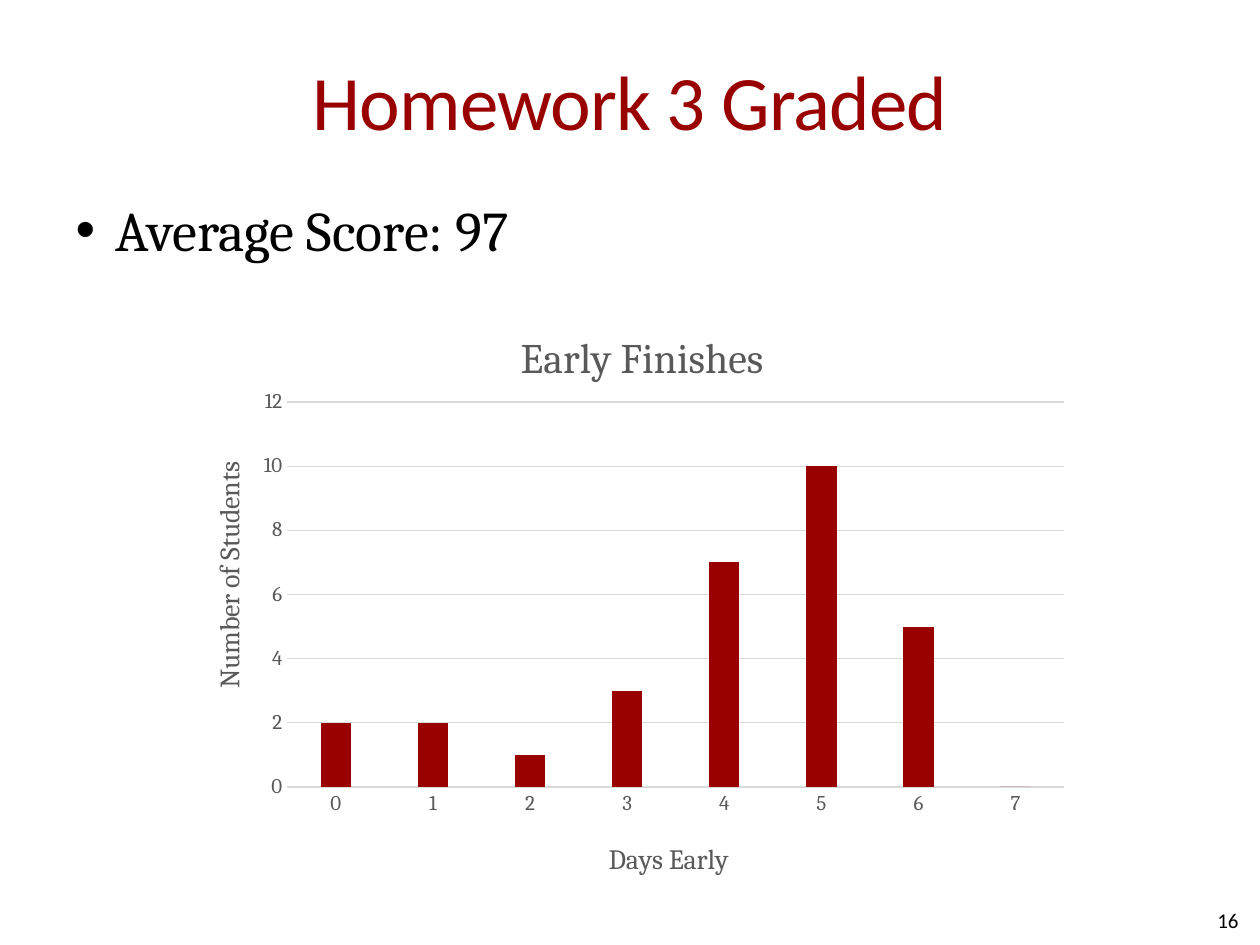
from lxml import etree
from pptx import Presentation
from pptx.chart.data import CategoryChartData
from pptx.dml.color import RGBColor
from pptx.enum.chart import XL_CHART_TYPE, XL_TICK_MARK
from pptx.enum.text import MSO_ANCHOR, PP_ALIGN
from pptx.oxml.ns import qn
from pptx.util import Inches, Pt

COLUMN = XL_CHART_TYPE.COLUMN_CLUSTERED
NO_TICK = XL_TICK_MARK.NONE
MIDDLE = MSO_ANCHOR.MIDDLE
CENTER, RIGHT = PP_ALIGN.CENTER, PP_ALIGN.RIGHT

TITLE = "Homework 3 Graded"
BULLET = "Average Score: 97"
PAGE_NUMBER = "16"
CHART_TITLE = "Early Finishes"
CATEGORY_TITLE = "Days Early"
VALUE_TITLE = "Number of Students"
STUDENTS_BY_DAYS_EARLY = [2, 2, 1, 3, 7, 10, 5, 0]

THEME = {
    "heading": "Calibri",
    "text": "Cambria",
    "accent": RGBColor.from_string("990000"),
    "black": RGBColor.from_string("000000"),
    "gray": RGBColor.from_string("595959"),
    "grid": RGBColor.from_string("D9D9D9"),
    "title_size": 44,
    "body_size": 32,
    "chart_title_size": 24,
    "axis_title_size": 16,
    "label_size": 12,
}

BOXES = {
    "title": (0.5, 0.17, 9, 1.25),
    "body": (0.5, 1.5, 9, 0.67),
    "number": (7.5, 7.1, 2.33, 0.4),
    "chart": (1.42, 2.27, 7.17, 4.85),
}
LAYOUTS = {
    "plot": {"x": 0.12, "y": 0.19, "w": 0.86, "h": 0.63},
    "chart_title": {"x": 0.37, "y": 0.06},
    "category_title": {"x": 0.47, "y": 0.9},
    "value_title": {"x": 0.03, "y": 0.28},
}


def box(name):
    return [Inches(length) for length in BOXES[name]]


def place(shape, name):
    shape.left, shape.top, shape.width, shape.height = box(name)


def format_font(font, face, size, color):
    values = {"name": THEME[face], "size": Pt(THEME[size]), "bold": False}
    for attribute, value in values.items():
        setattr(font, attribute, value)
    font.color.rgb = THEME[color]


def write(text_frame, text, face, size, color, **frame_format):
    for attribute, value in frame_format.items():
        setattr(text_frame, attribute, value)
    paragraph = text_frame.paragraphs[0]
    run = paragraph.add_run()
    run.text = text
    format_font(run.font, face, size, color)
    return paragraph, run


def set_layout(element, position, index):
    for old_layout in element.findall(qn("c:layout")):
        element.remove(old_layout)
    layout = etree.Element(qn("c:layout"))
    manual = etree.SubElement(layout, qn("c:manualLayout"))
    settings = {"xMode": "edge", "yMode": "edge", **position}
    if "w" in position:
        settings = {"layoutTarget": "inner", **settings}
    for tag, value in settings.items():
        etree.SubElement(manual, qn(f"c:{tag}")).set("val", str(value))
    element.insert(index, layout)


def add_chart_title(owner, title, text, size, layout):
    write(title.text_frame, text, "text", size, "gray")
    set_layout(title._element, LAYOUTS[layout], 1)


def format_axis(axis, title, layout):
    axis.major_tick_mark = axis.minor_tick_mark = NO_TICK
    format_font(axis.tick_labels.font, "text", "label_size", "gray")
    add_chart_title(axis, axis.axis_title, title, "axis_title_size", layout)


def format_line(line):
    line.color.rgb = THEME["grid"]
    line.width = Pt(0.75)


def add_students_chart(slide):
    data = CategoryChartData()
    data.categories = [str(day) for day in range(len(STUDENTS_BY_DAYS_EARLY))]
    data.add_series("Series 1", STUDENTS_BY_DAYS_EARLY)
    chart = slide.shapes.add_chart(COLUMN, *box("chart"), data).chart
    chart.has_legend = False
    chart.font.name = THEME["text"]
    chart.font.size = Pt(10)
    add_chart_title(chart, chart.chart_title, CHART_TITLE, "chart_title_size", "chart_title")

    plot = chart.plots[0]
    plot.gap_width, plot.overlap, plot.vary_by_categories = 219, -27, False
    fill = plot.series[0].format.fill
    fill.solid()
    fill.fore_color.rgb = THEME["accent"]

    format_axis(chart.category_axis, CATEGORY_TITLE, "category_title")
    format_line(chart.category_axis.format.line)
    value_axis = chart.value_axis
    format_axis(value_axis, VALUE_TITLE, "value_title")
    value_axis.minimum_scale, value_axis.maximum_scale, value_axis.major_unit = 0, 12, 2
    value_axis.format.line.fill.background()
    format_line(value_axis.major_gridlines.format.line)
    set_layout(chart._chartSpace.chart.plotArea, LAYOUTS["plot"], 0)


def main():
    presentation = Presentation()
    presentation.slide_width, presentation.slide_height = Inches(10), Inches(7.5)
    slide = presentation.slides.add_slide(presentation.slide_layouts[1])

    title = slide.shapes.title
    place(title, "title")
    paragraph, run = write(title.text_frame, TITLE, "heading", "title_size", "accent",
                           vertical_anchor=MIDDLE, margin_left=0, margin_right=0)
    paragraph.alignment = CENTER
    run._r.get_or_add_rPr().set("spc", "-50")

    body = slide.placeholders[1]
    place(body, "body")
    paragraph, run = write(body.text_frame, BULLET, "text", "body_size", "black")
    properties = paragraph._p.get_or_add_pPr()
    properties.set("marL", str(Inches(0.32)))
    properties.set("indent", str(-Inches(0.32)))

    number = slide.shapes.add_textbox(*box("number"))
    paragraph, run = write(number.text_frame, PAGE_NUMBER, "heading", "label_size", "black",
                           word_wrap=True, vertical_anchor=MIDDLE, margin_left=0,
                           margin_right=0, margin_top=0, margin_bottom=0)
    paragraph.alignment = RIGHT

    add_students_chart(slide)
    presentation.save("out.pptx")


if __name__ == "__main__":
    main()
